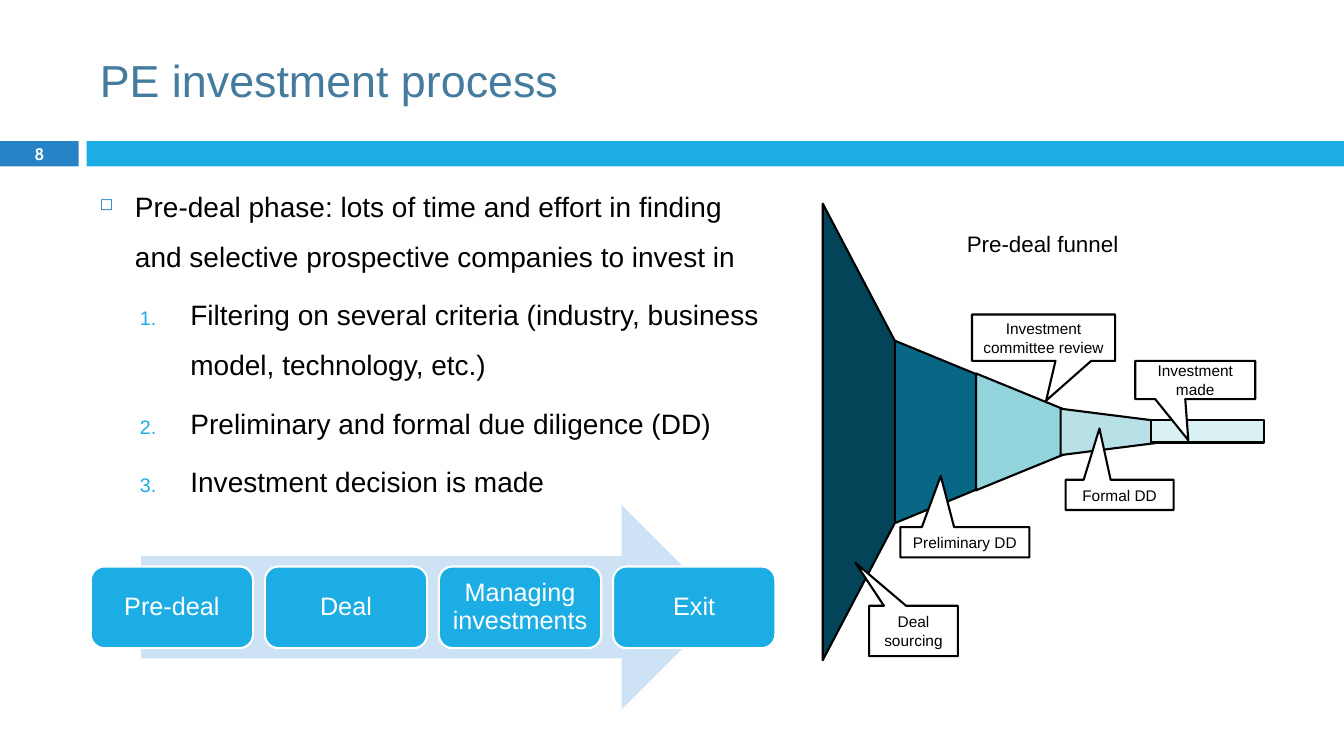
from lxml.etree import SubElement
from pptx import Presentation
from pptx.dml.color import RGBColor
from pptx.enum.shapes import MSO_SHAPE as Preset
from pptx.enum.text import MSO_ANCHOR as Anchor, MSO_AUTO_SIZE as AutoSize, PP_ALIGN as Align
from pptx.oxml.ns import qn
from pptx.util import Inches, Pt

# Grid: square cells of a tenth of an inch
CELL = Inches(0.1)
COLUMNS, ROWS = 133.3, 75
TITLE_ONLY = 5

BLACK = RGBColor(0x00, 0x00, 0x00)
WHITE = RGBColor(0xFF, 0xFF, 0xFF)
TITLE_BLUE = RGBColor(0x45, 0x7B, 0x9E)
DEEP_BLUE = RGBColor(0x26, 0x83, 0xC6)
SKY_BLUE = RGBColor(0x1C, 0xAD, 0xE4)
ARROW_BLUE = RGBColor(0xCD, 0xE3, 0xF5)

# Left, length and height of each funnel triangle, and its fill
FUNNEL_AXIS = 42.85
FUNNEL_STAGES = [
    (81.6, 11.9, 45.3, RGBColor(0x04, 0x44, 0x58)),
    (88.75, 22, 18.1, RGBColor(0x07, 0x67, 0x85)),
    (96.8, 14.2, 11.6, RGBColor(0x92, 0xD3, 0xDC)),
    (105.2, 18.2, 4.6, RGBColor(0xB7, 0xE1, 0xE7)),
]
FUNNEL_END = RGBColor(0xDB, 0xF0, 0xF3)

# Text, frame and pointer tip of each callout
CALLOUTS = [
    ("Deal sourcing", (86.2, 60.1, 8.8, 5), (-0.655, -1.353)),
    ("Preliminary DD", (89.3, 52.3, 12.8, 3), (-0.187, -2.195)),
    ("Formal DD", (105.7, 47.6, 10.7, 3), (-0.187, -2.195)),
    ("Investment committee review", (96.4, 31.2, 14.2, 4.6), (0.018, 1.359)),
    ("Investment made", (112.6, 35.8, 11.9, 3.8), (-0.058, 1.573)),
]

PHASES = ["Pre-deal", "Deal", "Managing investments", "Exit"]
PRE_DEAL = ("Pre-deal phase: lots of time and effort in finding "
            "and selective prospective companies to invest in")
PRE_DEAL_STEPS = [
    "Filtering on several criteria (industry, business model, technology, etc.)",
    "Preliminary and formal due diligence (DD)",
    "Investment decision is made",
]


def cells(*counts):
    return [round(count * CELL) for count in counts]


def write(para, text, size, color=BLACK, font="Arial", bold=False,
          align=Align.LEFT, spacing=None, before=None):
    span = para.add_run()
    span.text = text
    span.font.name, span.font.size, span.font.bold = font, Pt(size), bold
    span.font.color.rgb = color
    para.alignment = align
    if spacing:
        para.line_spacing = spacing
    if before is not None:
        para.space_before = Pt(before)


def add_block(page, preset, frame, fill, line=None):
    block = page.shapes.add_shape(preset, *cells(*frame))
    block.shadow.inherit = False
    block.fill.solid()
    block.fill.fore_color.rgb = fill
    if line is None:
        block.line.fill.background()
    else:
        block.line.color.rgb = line
        block.line.width = Pt(1.5)
    block.text_frame.vertical_anchor = Anchor.MIDDLE
    return block


def add_text_box(page, frame, wrap=True):
    box = page.shapes.add_textbox(*cells(*frame)).text_frame
    box.word_wrap = wrap
    return box


def add_bullet(para, indent, hanging, color, percent, tag, **attributes):
    props = para._p.get_or_add_pPr()
    left, first = cells(indent, -hanging)
    props.set("marL", str(left))
    props.set("indent", str(first))
    tint = SubElement(props, qn("a:buClr"))
    SubElement(tint, qn("a:srgbClr"), val=str(color))
    SubElement(props, qn("a:buSzPct"), val=str(percent * 1000))
    SubElement(props, qn(tag), **attributes)


def add_header(page):
    title = page.shapes.title
    title.left, title.top, title.width, title.height = cells(8.9, 2.5, 118.9, 10.8)
    title.text_frame.vertical_anchor = Anchor.MIDDLE
    write(title.text_frame.paragraphs[0], "PE investment process", 32, TITLE_BLUE)
    number = add_block(page, Preset.RECTANGLE, (0, 14, 7.8, 2.5), DEEP_BLUE)
    write(number.text_frame.paragraphs[0], "8", 11.9, WHITE, font="Cabin",
          bold=True, align=Align.CENTER)
    add_block(page, Preset.RECTANGLE, (8.6, 14, COLUMNS - 8.6, 2.5), SKY_BLUE)


def add_body(page):
    box = add_text_box(page, (8.9, 16.6, 68, 53.9))
    para = box.paragraphs[0]
    write(para, PRE_DEAL, 20, spacing=1.5, before=7)
    add_bullet(para, 3.5, 3.5, DEEP_BLUE, 60, "a:buChar", char="◻")
    for step in PRE_DEAL_STEPS:
        para = box.add_paragraph()
        para.level = 1
        write(para, step, 20, spacing=1.5, before=5.5)
        add_bullet(para, 9, 5, SKY_BLUE, 70, "a:buAutoNum", type="arabicPeriod")


def add_phases(page):
    add_block(page, Preset.RIGHT_ARROW, (14, 50.1, 57.8, 20.3), ARROW_BLUE)
    left, span, width = 9, 67.9, 16.1
    pitch = (span - width) / (len(PHASES) - 1)
    for index, phase in enumerate(PHASES):
        card = add_block(page, Preset.ROUNDED_RECTANGLE,
                         (left + index * pitch, 56.2, width, 8.1), SKY_BLUE, WHITE)
        frame = card.text_frame
        frame.margin_left, frame.margin_right = cells(0.7, 0.7)
        write(frame.paragraphs[0], phase, 18, WHITE, align=Align.CENTER, spacing=0.9)


def add_funnel_stage(page, left, length, height, fill):
    # A quarter turn about the centre points the triangle to the right
    frame = (left + (length - height) / 2, FUNNEL_AXIS - length / 2, height, length)
    add_block(page, Preset.FLOWCHART_EXTRACT, frame, fill, BLACK).rotation = 90


def add_callout(page, text, frame, tip):
    callout = add_block(page, Preset.RECTANGULAR_CALLOUT, frame, WHITE, BLACK)
    callout.adjustments[0], callout.adjustments[1] = tip
    write(callout.text_frame.paragraphs[0], text, 11, align=Align.CENTER)


def add_funnel(page):
    for stage in FUNNEL_STAGES:
        add_funnel_stage(page, *stage)
    add_block(page, Preset.RECTANGLE, (114.2, 41.7, 11.2, 2.2), FUNNEL_END, BLACK)
    for callout in CALLOUTS:
        add_callout(page, *callout)
    label = add_text_box(page, (94.9, 22.3, 17.2, 3.7), wrap=False)
    label.auto_size = AutoSize.SHAPE_TO_FIT_TEXT
    write(label.paragraphs[0], "Pre-deal funnel", 16)


def main():
    deck = Presentation()
    deck.slide_width, deck.slide_height = cells(COLUMNS, ROWS)
    page = deck.slides.add_slide(deck.slide_layouts[TITLE_ONLY])
    add_header(page)
    add_body(page)
    add_phases(page)
    add_funnel(page)
    deck.save("out.pptx")


if __name__ == "__main__":
    main()
